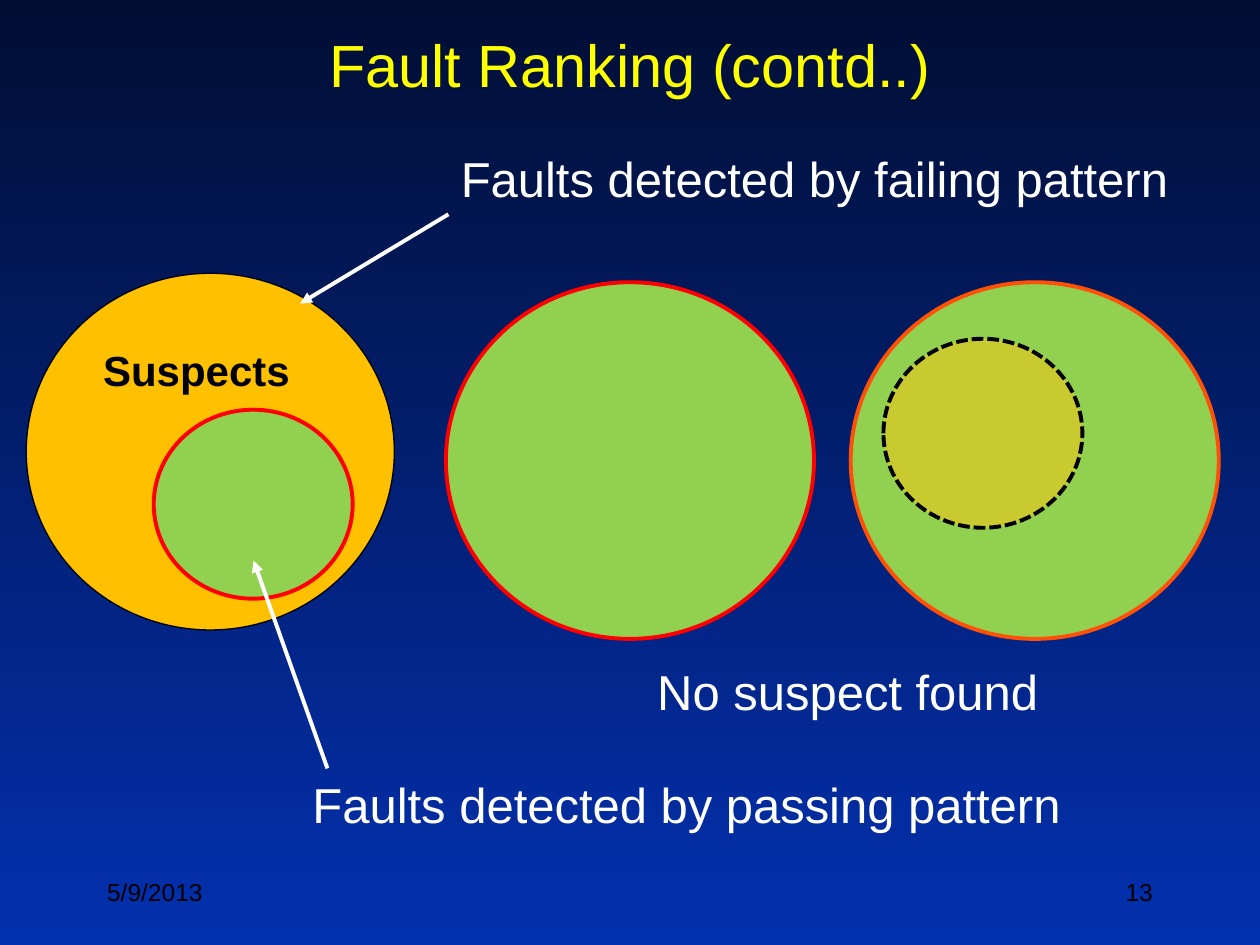
import pptx
import pptx.util
from dataclasses import dataclass
from lxml import etree
from pptx.dml.color import RGBColor
from pptx.enum.dml import MSO_LINE
from pptx.enum.shapes import MSO_CONNECTOR, MSO_SHAPE
from pptx.enum.text import MSO_ANCHOR, PP_ALIGN
from pptx.oxml.ns import qn

Cm, Pt = pptx.util.Cm, pptx.util.Pt


@dataclass(frozen=True)
class Theme:
    font: str = "Arial"
    bg_top: str = "010E34"
    bg_bottom: str = "0330AF"
    title: str = "FFFF00"
    light: str = "FFFFFF"
    dark: str = "000000"
    failing: str = "FFC000"
    passing: str = "92D050"
    overlap: str = "FFC611"
    red: str = "FF0000"
    orange: str = "FF5008"
    title_size: int = 34
    label_size: int = 28
    suspect_size: int = 24
    footer_size: int = 14
    thin: float = 0.75
    thick: float = 2.25


T = Theme()
LARGE = (7.42, 7.19)  # circle sizes in cm
SMALL = (4.01, 3.81)


def rgb(code):
    return RGBColor.from_string(code)


def set_background(s):
    fill = s.background.fill
    fill.gradient()
    fill.gradient_angle = 270
    for stop, color in zip(fill.gradient_stops, (T.bg_top, T.bg_bottom)):
        stop.color.rgb = rgb(color)


def write(tf, text, size, color, align=PP_ALIGN.LEFT, bold=False,
          anchor=MSO_ANCHOR.TOP):
    tf.word_wrap = True
    tf.vertical_anchor = anchor
    p = tf.paragraphs[0]
    p.text = text
    p.alignment = align
    p.font.name, p.font.size, p.font.bold = T.font, Pt(size), bold
    p.font.color.rgb = rgb(color)


def add_title(s, text):
    sp = s.shapes.title
    sp.left, sp.top, sp.width, sp.height = Cm(1.27), Cm(0.43), Cm(22.86), Cm(3.18)
    write(sp.text_frame, text, T.title_size, T.title, PP_ALIGN.CENTER)


def add_label(s, text, x, y, w, h=1.45, size=T.label_size, color=T.light, **style):
    sp = s.shapes.add_textbox(Cm(x), Cm(y), Cm(w), Cm(h))
    write(sp.text_frame, text, size, color, **style)


def add_circle(s, x, y, size, fill, line, weight=T.thick):
    sp = s.shapes.add_shape(MSO_SHAPE.OVAL, Cm(x), Cm(y), *map(Cm, size))
    sp.shadow.inherit = False
    sp.fill.solid()
    sp.fill.fore_color.rgb = rgb(fill)
    sp.line.color.rgb = rgb(line)
    sp.line.width = Pt(weight)
    return sp


def set_opacity(sp, percent):
    color = sp._element.spPr.find(qn("a:solidFill")).find(qn("a:srgbClr"))
    etree.SubElement(color, qn("a:alpha"), val=str(percent * 1000))


def add_arrow(s, x1, y1, x2, y2):
    c = s.shapes.add_connector(MSO_CONNECTOR.STRAIGHT, Cm(x1), Cm(y1), Cm(x2), Cm(y2))
    c.line.color.rgb = rgb(T.light)
    c.line.width = Pt(T.thick)
    etree.SubElement(c.line._get_or_add_ln(), qn("a:tailEnd"), type="triangle")
    etree.SubElement(c._element.spPr, qn("a:effectLst"))


def add_footer(s, text, x, align):
    add_label(s, text, x, 17.35, 5.28, 1.27, T.footer_size, T.dark,
              align=align, anchor=MSO_ANCHOR.MIDDLE)


def main():
    prs = pptx.Presentation()
    prs.slide_width, prs.slide_height = Cm(25.4), Cm(19.05)
    s = prs.slides.add_slide(prs.slide_layouts[5])
    set_background(s)
    add_title(s, "Fault Ranking (contd..)")

    # Passing faults inside failing faults: the rest are suspects
    add_circle(s, 0.53, 5.51, LARGE, T.failing, T.dark, T.thin)
    add_circle(s, 3.1, 8.26, SMALL, T.passing, T.red)
    add_label(s, "Suspects", 1.83, 6.83, 4.78, 1.42, T.suspect_size, T.dark, bold=True)

    # Failing faults fully covered: no suspects
    add_circle(s, 8.99, 5.69, LARGE, T.passing, T.red)
    add_circle(s, 17.15, 5.69, LARGE, T.passing, T.orange)
    covered = add_circle(s, 17.81, 6.83, SMALL, T.overlap, T.dark)
    covered.line.dash_style = MSO_LINE.SQUARE_DOT
    set_opacity(covered, 50)

    # Labels and their arrows
    add_label(s, "Faults detected by failing pattern", 9.04, 2.87, 14.96)
    add_arrow(s, 9.04, 4.32, 6.05, 6.12)
    add_label(s, "Faults detected by passing pattern", 6.05, 15.49, 15.77)
    add_arrow(s, 6.6, 15.49, 5.11, 11.3)
    add_label(s, "No suspect found", 13, 13.21, 8.28)

    # Footer
    add_footer(s, "5/9/2013", 1.91, PP_ALIGN.LEFT)
    add_footer(s, "13", 18.21, PP_ALIGN.RIGHT)

    prs.save("out.pptx")


if __name__ == "__main__":
    main()
